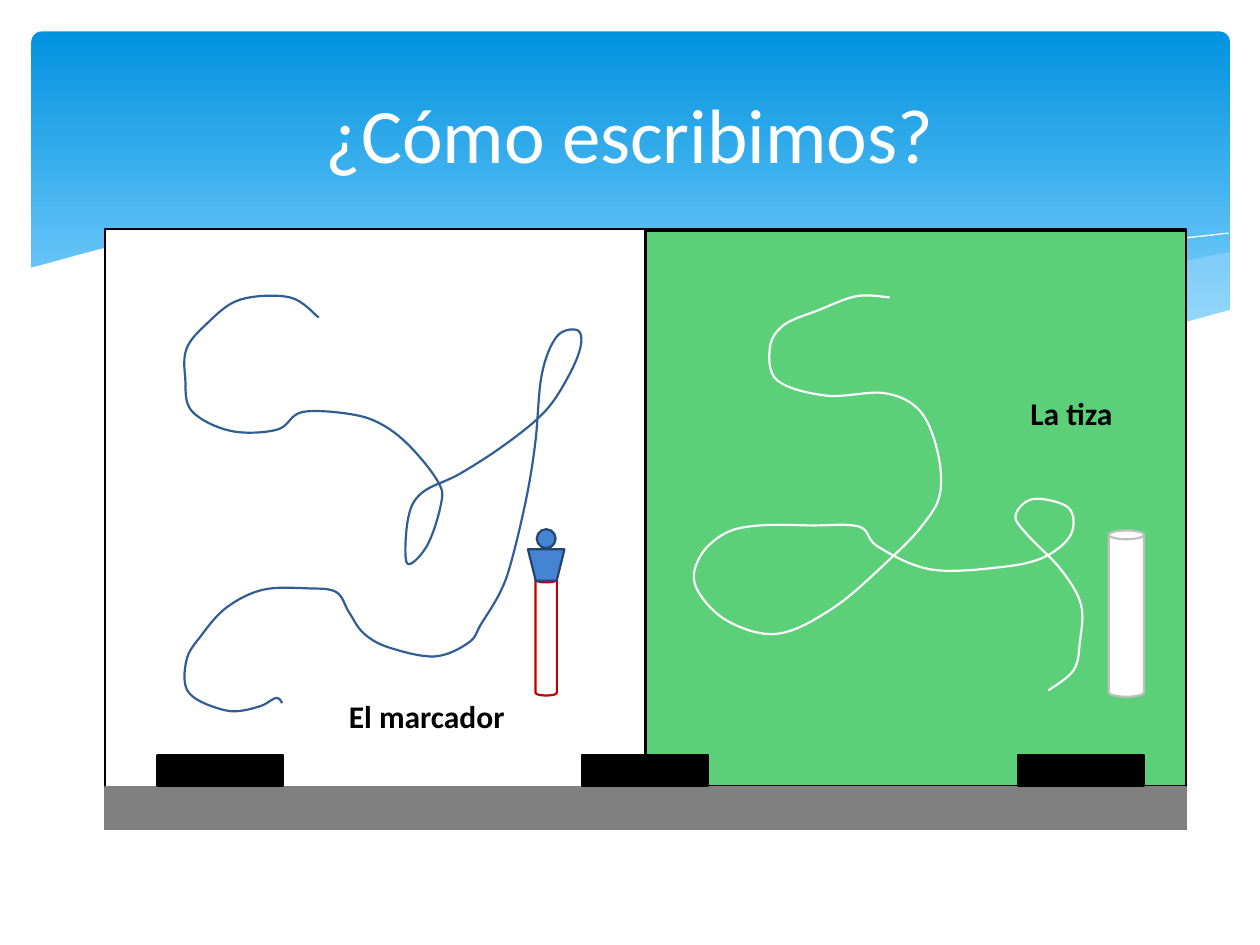
from itertools import chain
from lxml.etree import SubElement
from pptx import Presentation
from pptx.dml.color import RGBColor
from pptx.enum.shapes import MSO_SHAPE
from pptx.enum.text import MSO_ANCHOR, PP_ALIGN
from pptx.oxml.ns import qn
from pptx.util import Inches, Pt

COLS, ROWS = 1000, 750
CELL = Inches(10) / COLS
BOARD_X, BOARD_Y, BOARD_W = 83.3, 182, 858
TRAY_Y, TRAY_H = 625, 33
ERASER_W, ERASER_H = 100, 25
WAVE_LEFT, WAVE_RIGHT, WAVE_FOOT = 23, 977, 329

WHITE, BLACK, GRAY, GREEN = "FFFFFF", "000000", "808080", "5BD078"
SKY, PALE_SKY, MIST = "0293E0", "83D3FE", "C6E7FC"
INK, CAP_BLUE, CAP_EDGE = "315D95", "4584D3", "24456E"
MARKER_RED, CHALK_EDGE = "C00000", "BFBFBF"

CHALK_STROKE = {
    "hook": [(706, 236), (680, 235), (650, 246), (622, 258), (611, 276),
             (617, 302), (656, 314), (702, 312)],
    "belly": [(730, 326), (744, 358), (746, 392), (732, 417), (706, 444)],
    "loop": [(662, 482), (617, 503), (576, 492), (552, 465), (556, 441),
             (576, 423), (603, 417), (645, 417), (682, 418)],
    "valley": [(697, 434), (739, 452), (795, 450), (829, 442)],
    "curl": [(850, 424), (848, 403), (820, 396), (806, 409), (815, 424)],
    "tail": [(842, 452), (858, 480), (857, 510), (852, 532), (832, 548)],
}
MARKER_STROKE = {
    "hook": [(253, 252), (230, 236), (190, 238), (163, 258), (148, 277),
             (147, 300), (152, 326), (183, 342), (220, 341)],
    "shoulder": [(240, 327), (280, 329), (305, 338), (327, 356), (348, 383),
                 (350, 400), (339, 433), (323, 447)],
    "rise": [(324, 411), (335, 391), (365, 376), (402, 352), (433, 326),
             (452, 297), (461, 274), (458, 262), (442, 267), (430, 297)],
    "descent": [(425, 350), (418, 394), (406, 445), (397, 470), (382, 495)],
    "valley": [(372, 510), (345, 521), (309, 514), (289, 503), (277, 486),
               (267, 470)],
    "tail": [(245, 467), (209, 468), (180, 482), (160, 504), (148, 524),
             (150, 550), (180, 564), (205, 561), (219, 554), (224, 558)],
}


def rgb(color):
    """Turn a hex string into a colour."""
    return RGBColor.from_string(color)


def grid(*cells):
    """Turn grid columns or rows into whole slide units."""
    return [round(cell * CELL) for cell in cells]


def smooth(points, steps=8):
    """Return a Catmull-Rom curve that passes through the points."""
    padded = [points[0], *points, points[-1]]
    curve = [points[0]]
    for before, start, end, after in zip(padded, padded[1:], padded[2:], padded[3:]):
        for step in range(1, steps + 1):
            t = step / steps
            weights = ((-t + 2 * t**2 - t**3) / 2, (2 - 5 * t**2 + 3 * t**3) / 2,
                       (t + 4 * t**2 - 3 * t**3) / 2, (t**3 - t**2) / 2)
            curve.append(tuple(
                sum(weight * value for weight, value in zip(weights, values))
                for values in zip(before, start, end, after)))
    return curve


def wave(left, right, heights):
    """Return a smooth curve through heights at equal gaps."""
    gap = (right - left) / (len(heights) - 1)
    return smooth([(left + i * gap, y) for i, y in enumerate(heights)])


def paint(s, fill=None, line=None, width=1.25):
    """Set the fill and line of a shape and drop its shadow."""
    s.shadow.inherit = False
    if fill:
        s.fill.solid()
        s.fill.fore_color.rgb = rgb(fill)
    else:
        s.fill.background()
    if line:
        s.line.color.rgb = rgb(line)
        s.line.width = Pt(width)
    else:
        s.line.fill.background()
    return s


def add_preset(shapes, kind, box, fill, line=None):
    """Add a preset shape in a box of grid cells."""
    return paint(shapes.add_shape(kind, *grid(*box)), fill, line)


def add_outline(shapes, points, fill=None, line=None, width=1.25):
    """Add an outline, closed when it has a fill."""
    start, *rest = [grid(*point) for point in points]
    builder = shapes.build_freeform(*start)
    builder.add_line_segments(rest, close=bool(fill))
    return paint(builder.convert_to_shape(), fill, line, width)


def add_stroke(shapes, sections, color):
    """Draw the sections of a handwritten stroke as one line."""
    points = list(chain.from_iterable(sections.values()))
    add_outline(shapes, smooth(points), line=color)


def add_text(shapes, box, text, size, color, bold=False,
             align=PP_ALIGN.LEFT, anchor=MSO_ANCHOR.TOP):
    """Add a wrapped text box in a box of grid cells."""
    tf = shapes.add_textbox(*grid(*box)).text_frame
    tf.word_wrap = True
    tf.vertical_anchor = anchor
    tf.text = text
    p = tf.paragraphs[0]
    p.alignment = align
    font = p.runs[0].font
    font.name, font.size, font.bold = "Calibri", Pt(size), bold
    font.color.rgb = rgb(color)


def add_banner(shapes):
    """Add the rounded banner with its blue gradient."""
    s = add_preset(shapes, MSO_SHAPE.ROUNDED_RECTANGLE, (25, 25, 951, 270), SKY)
    s.adjustments[0] = 0.03
    s.fill.gradient()
    s.fill.gradient_angle = 270
    for stop, color, position in zip(s.fill.gradient_stops, (SKY, PALE_SKY), (0, 0.9)):
        stop.color.rgb = rgb(color)
        stop.position = position


def add_waves(shapes):
    """Add the pale, thin and white waves at the foot of the banner."""
    crest = wave(661, 976, (265, 244, 221, 200))
    trough = wave(661, 976, (265, 277, 274, 247))
    s = add_outline(shapes, crest + trough[::-1], fill=MIST)
    color = next(s.element.iter(qn("a:srgbClr")))
    SubElement(color, qn("a:alpha"), val="29000")
    add_outline(shapes, wave(613, 975, (257, 226, 200, 185)), line=WHITE, width=0)
    edge = wave(WAVE_LEFT, WAVE_RIGHT, (213, 185, 187, 205, 232, 257, 273, 274, 246))
    foot = [(WAVE_RIGHT, WAVE_FOOT), (WAVE_LEFT, WAVE_FOOT)]
    add_outline(shapes, edge + foot, fill=WHITE)


def add_boards(shapes):
    """Add the white and green boards, the tray and the erasers."""
    half = BOARD_W / 2
    board_h = TRAY_Y - BOARD_Y
    parts = [((BOARD_X, BOARD_Y, BOARD_W, board_h + TRAY_H), WHITE, BLACK),
             ((BOARD_X + half, BOARD_Y + 1, half, board_h - 2), GREEN, BLACK),
             ((BOARD_X, TRAY_Y, BOARD_W, TRAY_H), GRAY, GRAY)]
    parts += [((x, TRAY_Y - ERASER_H - 1, ERASER_W, ERASER_H), BLACK, BLACK)
              for x in (125, 462, 808)]
    for box, fill, line in parts:
        add_preset(shapes, MSO_SHAPE.RECTANGLE, box, fill, line)


def add_chalk(shapes):
    """Add the chalk, its stroke and its label."""
    add_stroke(shapes, CHALK_STROKE, WHITE)
    add_preset(shapes, MSO_SHAPE.CAN, (880, 421, 28, 132), WHITE, CHALK_EDGE)
    add_text(shapes, (808, 308, 117, 40), "La tiza", 18, BLACK, bold=True)


def add_marker(shapes):
    """Add the marker, its stroke and its label."""
    add_stroke(shapes, MARKER_STROKE, INK)
    add_preset(shapes, MSO_SHAPE.CAN, (425, 458, 17, 94), WHITE, MARKER_RED)
    cap = add_preset(shapes, MSO_SHAPE.TRAPEZOID, (419, 436, 29, 25), CAP_BLUE, CAP_EDGE)
    cap.rotation = 180
    add_preset(shapes, MSO_SHAPE.OVAL, (426, 420, 15, 15), CAP_BLUE, CAP_EDGE)
    add_text(shapes, (267, 548, 208, 40), "El marcador", 18, BLACK, bold=True)


def main():
    """Build the slide and save it."""
    prs = Presentation()
    prs.slide_width, prs.slide_height = grid(COLS, ROWS)
    shapes = prs.slides.add_slide(prs.slide_layouts[6]).shapes
    add_banner(shapes)
    add_waves(shapes)
    add_text(shapes, (50, 37, 900, 137), "¿Cómo escribimos?", 44, WHITE,
             align=PP_ALIGN.CENTER, anchor=MSO_ANCHOR.MIDDLE)
    add_boards(shapes)
    add_chalk(shapes)
    add_marker(shapes)
    prs.save("out.pptx")


if __name__ == "__main__":
    main()
